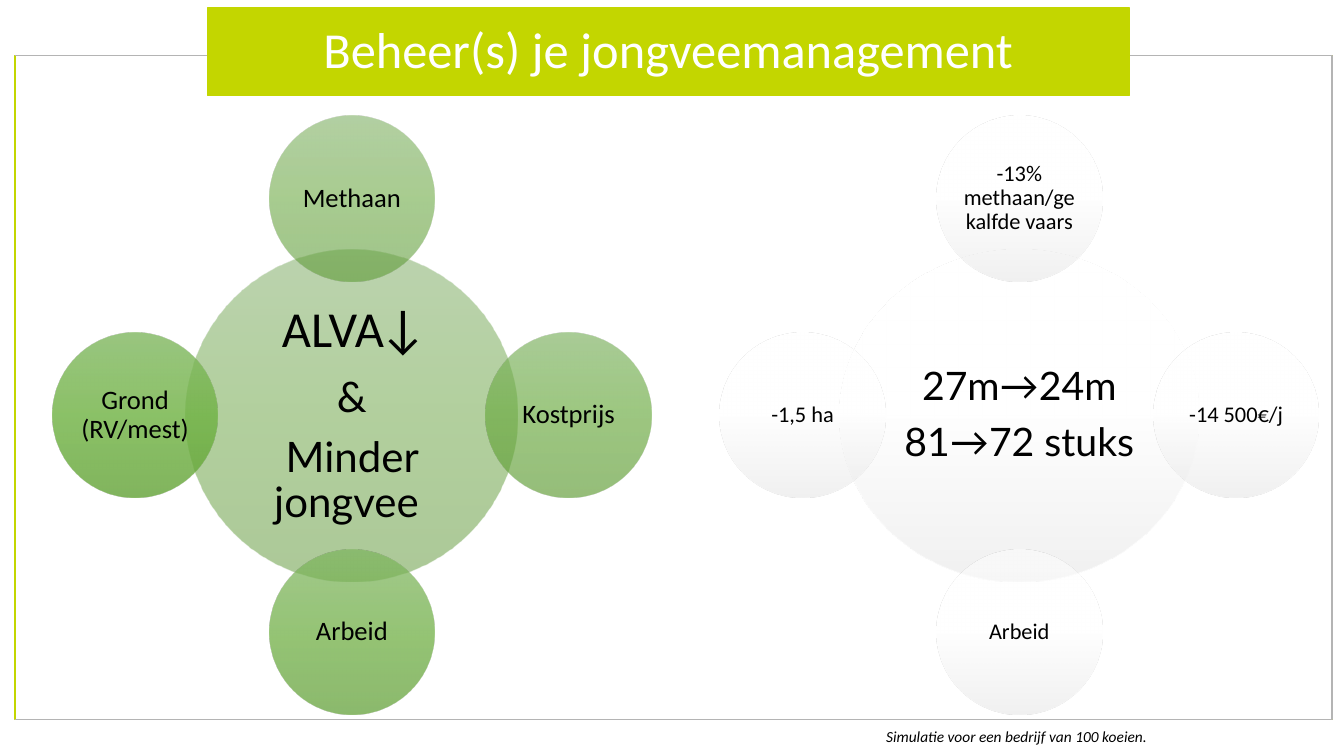
from pptx import Presentation
from pptx.dml.color import RGBColor
from pptx.enum.shapes import MSO_SHAPE
from pptx.enum.text import MSO_ANCHOR, PP_ALIGN
from pptx.oxml import parse_xml
from pptx.oxml.ns import nsdecls
from pptx.util import Inches, Pt

ELLIPSE = MSO_SHAPE.OVAL
RECTANGLE = MSO_SHAPE.RECTANGLE
MIDDLE = MSO_ANCHOR.MIDDLE
CENTER = PP_ALIGN.CENTER

COLORS = {"lime": "C3D600", "grey": "B4B4B4", "white": "FFFFFF", "black": "000000"}
HUB_GREEN = ("78A95E", "65A23C", "599431")
SATELLITE_GREENS = [
    (("7BAD5F", "68A63E", "5B9833"), 57),
    (("7DB160", "6AAA3F", "5E9C34"), 65),
    (("7FB561", "6DAE41", "609F35"), 72),
    (("81B862", "70B343", "63A337"), 80),
]
PALE = (("FFFFFF", "FFFFFF", "E3E3E3"), 50)

HUB_Y = 4.12
HUB_HEIGHT = 3.29
SATELLITE_SIZE = 1.64
ORBIT = 2.15
DIRECTIONS = [(0, -1), (1, 0), (0, 1), (-1, 0)]
FRAME = (0.15, 0.55, 13.06, 6.59)


def rgb(name):
    return RGBColor.from_string(COLORS[name])


def set_gradient(shape, colors, opacity):
    stops = "".join(
        f'<a:gs pos="{position}"><a:srgbClr val="{color}">'
        f'<a:alpha val="{opacity * 1000}"/></a:srgbClr></a:gs>'
        for position, color in zip((0, 50000, 100000), colors)
    )
    gradient = parse_xml(
        f'<a:gradFill {nsdecls("a")} rotWithShape="1"><a:gsLst>{stops}</a:gsLst>'
        '<a:lin ang="5400000" scaled="0"/></a:gradFill>'
    )
    shape.fill.background()
    properties = shape._element.spPr
    properties.replace(properties.find("{*}noFill"), gradient)


def set_insets(frame, horizontal, vertical):
    frame.margin_left = frame.margin_right = Inches(horizontal)
    frame.margin_top = frame.margin_bottom = Inches(vertical)


def format_paragraph(paragraph, size, color="black", font="Calibri"):
    paragraph.alignment = CENTER
    paragraph.line_spacing = 0.9
    paragraph.space_after = Pt(0.35 * size)
    paragraph.font.size = Pt(size)
    paragraph.font.name = font
    paragraph.font.color.rgb = rgb(color)


def add_circle(slide, center, size, colors, opacity, inset):
    (x, y), (width, height) = center, size
    circle = slide.shapes.add_shape(
        ELLIPSE, Inches(x - width / 2), Inches(y - height / 2),
        Inches(width), Inches(height))
    circle.shadow.inherit = False
    circle.line.fill.background()
    set_gradient(circle, colors, opacity)
    frame = circle.text_frame
    frame.word_wrap = True
    frame.vertical_anchor = MIDDLE
    set_insets(frame, inset, inset)
    return frame


def add_hub(slide, center_x, width, colors, opacity, inset, lines):
    frame = add_circle(slide, (center_x, HUB_Y), (width, HUB_HEIGHT), colors, opacity, inset)
    for index, (words, size, font) in enumerate(lines):
        paragraph = frame.add_paragraph() if index else frame.paragraphs[0]
        paragraph.text = words
        format_paragraph(paragraph, size, font=font)
    return frame


def add_satellites(slide, center_x, labels, fills, size, inset):
    for (dx, dy), label, (colors, opacity) in zip(DIRECTIONS, labels, fills):
        center = (center_x + dx * ORBIT, HUB_Y + dy * ORBIT)
        frame = add_circle(
            slide, center, (SATELLITE_SIZE, SATELLITE_SIZE), colors, opacity, inset)
        frame.text = label
        format_paragraph(frame.paragraphs[0], size)


def add_frame(slide):
    left, top, width, height = map(Inches, FRAME)
    border = slide.shapes.add_shape(RECTANGLE, left, top, width, height)
    border.line.color.rgb = rgb("lime")
    outline = slide.shapes.build_freeform(left, top)
    outline.add_line_segments(
        [(left + width, top), (left + width, top + height), (left, top + height)],
        close=False)
    grey_sides = outline.convert_to_shape()
    grey_sides.line.color.rgb = rgb("grey")
    for edge in (border, grey_sides):
        edge.shadow.inherit = False
        edge.fill.background()
        edge.line.width = Pt(1)


def format_title(slide):
    title = slide.shapes.title
    title.left, title.top = Inches(2.06), Inches(0.08)
    title.width, title.height = Inches(9.14), Inches(0.87)
    title._element.spPr.append(parse_xml(
        f'<a:prstGeom {nsdecls("a")} prst="roundRect"><a:avLst/></a:prstGeom>'))
    title.fill.solid()
    title.fill.fore_color.rgb = rgb("lime")
    title.line.color.rgb = rgb("lime")
    title.line.width = Pt(1)
    frame = title.text_frame
    frame.text = "Beheer(s) je jongveemanagement"
    frame.word_wrap = True
    frame.vertical_anchor = MIDDLE
    set_insets(frame, 0.35, 0)
    format_paragraph(frame.paragraphs[0], 36, "white")
    slide.shapes._spTree.append(title._element)


def add_footnote(slide):
    footnote = slide.shapes.add_textbox(
        Inches(8.69), Inches(7.16), Inches(5.43), Inches(0.29))
    footnote.text_frame.word_wrap = True
    paragraph = footnote.text_frame.paragraphs[0]
    paragraph.text = "Simulatie voor een bedrijf van 100 koeien."
    paragraph.font.size = Pt(11)
    paragraph.font.name = "Calibri"
    paragraph.font.italic = True
    paragraph.font.color.rgb = rgb("black")


def main():
    presentation = Presentation()
    presentation.slide_width, presentation.slide_height = Inches(13.33), Inches(7.5)
    slide = presentation.slides.add_slide(presentation.slide_layouts[5])
    add_frame(slide)
    format_title(slide)

    measures_x, results_x = 3.49, 10.11
    measures = add_hub(
        slide, measures_x, 3.29, HUB_GREEN, 50, 0.05,
        [("ALVA", 36, "Calibri"), ("&", 30, "Lato"), ("Minder jongvee ", 30, "Lato")])
    arrow = measures.paragraphs[0].add_run()
    arrow.text = "↓"
    arrow.font.name = "Lato"
    add_satellites(
        slide, measures_x, ["Methaan", "Kostprijs", "Arbeid", "Grond (RV/mest) "],
        SATELLITE_GREENS, 19, 0.03)

    add_hub(
        slide, results_x, 3.56, *PALE, 0.04,
        [("27m→24m", 28, "Lato"), ("81→72 stuks", 28, "Lato")])
    add_satellites(
        slide, results_x,
        ["-13% methaan/gekalfde vaars", "-14 500€/j", "Arbeid", "-1,5 ha"],
        [PALE] * 4, 16, 0.02)

    add_footnote(slide)
    presentation.save("out.pptx")


if __name__ == "__main__":
    main()
